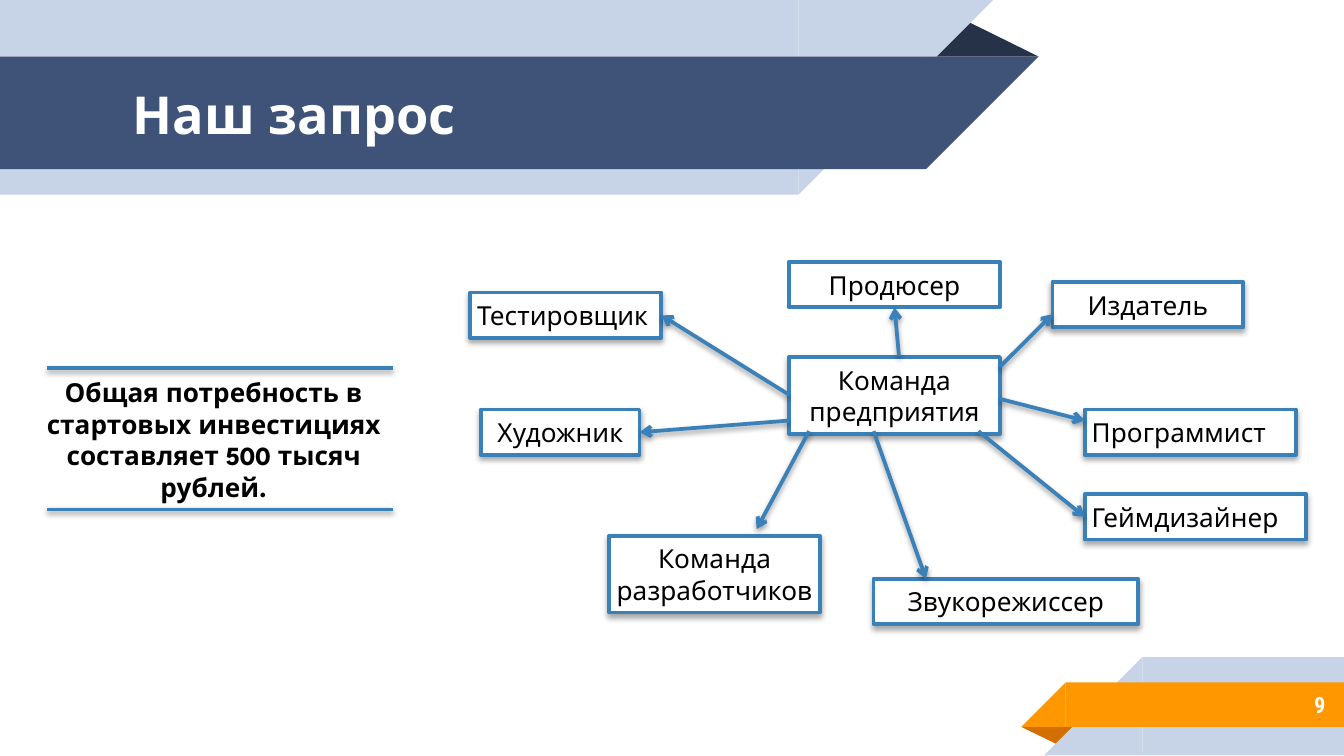
from dataclasses import dataclass

from lxml import etree
from pptx import Presentation
from pptx.dml.color import RGBColor
from pptx.enum import shapes, text
from pptx.oxml import ns
from pptx.util import Cm, Pt


@dataclass(frozen=True)
class Theme:
    navy: str = "3F5378"
    shade: str = "263248"
    pale: str = "C7D3E6"
    orange: str = "FF9800"
    rust: str = "D26F00"
    blue: str = "3A81BA"
    white: str = "FFFFFF"
    black: str = "000000"
    body_font: str = "League Spartan"
    number_font: str = "Roboto Condensed"
    title_size: int = 28
    body_size: int = 14
    number_size: int = 12
    line_width: int = 2


@dataclass(frozen=True)
class Box:
    """A rectangle in centimetres."""
    left: float
    top: float
    width: float
    height: float

    def inner(self, left, top, width, height):
        return Box(self.left + left, self.top + top, width, height)

    def point(self, x, y):
        return Cm(self.left + x), Cm(self.top + y)

    def emu(self):
        return [Cm(side) for side in (self.left, self.top, self.width, self.height)]


THEME = Theme()
CENTER, LEFT, RIGHT = text.PP_ALIGN.CENTER, text.PP_ALIGN.LEFT, text.PP_ALIGN.RIGHT
TOP_SIDE, LEFT_SIDE, BOTTOM_SIDE, RIGHT_SIDE = range(4)

# Role, box, alignment, arrow start, arrow end (a point or a side to join)
ROLES = [
    ("Продюсер", (6.02, 0, 3.99, 0.86), CENTER, (8.1, 1.78), BOTTOM_SIDE),
    ("Издатель", (11, 0.38, 3.61, 0.86), CENTER, (10.01, 1.98), (11, 0.99)),
    ("Команда разработчиков", (2.62, 5.18, 3.99, 1.45), CENTER, (6.4, 3.2), (5.41, 5.05)),
    ("Геймдизайнер", (11.61, 4.39, 4.19, 0.86), LEFT, (9.6, 3.2), LEFT_SIDE),
    ("Художник", (0.2, 2.79, 3, 0.86), CENTER, (6.02, 3), RIGHT_SIDE),
    ("Программист", (11.61, 2.79, 3.99, 0.86), LEFT, (10.01, 2.59), (11.61, 3)),
    ("Тестировщик", (0, 0.58, 3.61, 0.86), LEFT, (6.02, 2.51), RIGHT_SIDE),
    ("Звукорежиссер", (7.62, 5.99, 5, 0.86), CENTER, (7.62, 3.2), (8.61, 5.99)),
]


def apply(target, formats):
    for name, value in formats.items():
        setattr(target, name, value)


def rgb(color):
    return RGBColor.from_string(color)


def paint(shape, color):
    shape.shadow.inherit = False
    shape.fill.solid()
    shape.fill.fore_color.rgb = rgb(color)
    shape.line.fill.background()


def stroke(line):
    line.color.rgb = rgb(THEME.blue)
    line.width = Pt(THEME.line_width)


def cast_shadow(properties, distance, opacity):
    """Put a soft shadow below a shape or line, given its spPr."""
    for old in properties.findall(ns.qn("a:effectLst")):
        properties.remove(old)
    effects = etree.SubElement(properties, ns.qn("a:effectLst"))
    shadow = etree.SubElement(effects, ns.qn("a:outerShdw"), blurRad=str(Pt(3)),
                              dist=str(Pt(distance)), dir="5400000", rotWithShape="0")
    color = etree.SubElement(shadow, ns.qn("a:srgbClr"), val=THEME.black)
    etree.SubElement(color, ns.qn("a:alpha"), val=str(opacity * 1000))


def write(shape, words, align, inset, color=THEME.black, size=THEME.body_size,
          font=THEME.body_font, bold=False, wrap=True):
    frame = shape.text_frame
    margins = {f"margin_{side}": Cm(inset) for side in ("left", "top", "right", "bottom")}
    apply(frame, margins | {"word_wrap": wrap, "vertical_anchor": text.MSO_ANCHOR.MIDDLE})
    paragraph = frame.paragraphs[0]
    paragraph.alignment = align
    run = paragraph.add_run()
    run.text = words
    apply(run.font, {"name": font, "size": Pt(size), "bold": bold})
    run.font.color.rgb = rgb(color)


def add_polygon(slide, points, color):
    builder = slide.shapes.build_freeform(*points[0], scale=1.0)
    builder.add_line_segments(points[1:], close=True)
    paint(builder.convert_to_shape(), color)


def add_ribbon(slide, box, color, direction):
    """Draw a band with a slanted end, to the right (1) or the left (-1)."""
    band = slide.shapes.add_shape(shapes.MSO_SHAPE.RECTANGLE, *box.emu())
    paint(band, color)
    edge = box.width if direction > 0 else 0
    tip = (edge + direction * box.height, 0 if direction > 0 else box.height)
    corners = [(edge, 0), tip, (edge, box.height)]
    add_polygon(slide, [box.point(*corner) for corner in corners], color)


def add_line(slide, start, end, arrow=False):
    line = slide.shapes.add_connector(shapes.MSO_CONNECTOR.STRAIGHT, *start, *end)
    stroke(line.line)
    if arrow:
        etree.SubElement(line.line._get_or_add_ln(), ns.qn("a:tailEnd"), type="arrow")
    cast_shadow(line._element.spPr, 1.6, 38)
    return line


def add_banner(slide, box):
    fold = [(17.48, 1.07), (18.19, 0.36), (19.63, 1.07)]
    add_polygon(slide, [box.point(*corner) for corner in fold], THEME.shade)
    add_ribbon(slide, box.inner(0, 0, 15.09, box.height), THEME.pale, 1)
    add_ribbon(slide, box.inner(0, 1.07, 17.5, 2.13), THEME.navy, 1)
    title = slide.shapes.add_textbox(*box.inner(2.26, 1.09, 14.6, 2.13).emu())
    write(title, "Наш запрос", LEFT, 0.25, THEME.white, THEME.title_size, bold=True)


def add_footer(slide, box):
    fold = [(0, 1.32), (1.09, 1.32), (0.74, 1.68)]
    add_polygon(slide, [box.point(*corner) for corner in fold], THEME.rust)
    add_ribbon(slide, box.inner(2.29, 0, 3.81, box.height), THEME.pale, -1)
    add_ribbon(slide, box.inner(0.84, 0.48, 5.26, 0.84), THEME.orange, -1)
    number = slide.shapes.add_textbox(*box.inner(5.21, 0.41, 0.79, 0.99).emu())
    write(number, "9", RIGHT, 0.25, THEME.white, THEME.number_size,
          THEME.number_font, bold=True, wrap=False)


def add_card(slide, box, words, align, shadow=True):
    card = slide.shapes.add_shape(shapes.MSO_SHAPE.RECTANGLE, *box.emu())
    paint(card, THEME.white)
    stroke(card.line)
    if shadow:
        cast_shadow(card._element.spPr, 1.8, 35)
    write(card, words, align, 0.13)
    return card


def add_team_map(slide, box):
    add_card(slide, box.inner(6.02, 1.8, 3.99, 1.45), "Команда предприятия", CENTER)
    for role, place, align, start, end in ROLES:
        card = add_card(slide, box.inner(*place), role, align, shadow=role != "Продюсер")
        joined = isinstance(end, int)
        target = box.point(*(start if joined else end))
        arrow = add_line(slide, box.point(*start), target, arrow=True)
        if joined:
            arrow.end_connect(card, end)


def add_request(slide, box):
    request = slide.shapes.add_textbox(*box.inner(-0.43, 0.03, 7.16, 2.64).emu())
    write(request, "Общая потребность в стартовых инвестициях составляет 500 тысяч рублей.",
          CENTER, 0.2, bold=True)
    for level in (box.height, 0):
        add_line(slide, box.point(0, level), box.point(box.width, level))


def main():
    deck = Presentation()
    apply(deck, {"slide_width": Cm(25.4), "slide_height": Cm(14.29)})
    slide = deck.slides.add_slide(deck.slide_layouts[6])
    add_banner(slide, Box(0, 0, 19.63, 3.68))
    add_footer(slide, Box(19.3, 12.42, 6.1, 1.86))
    add_team_map(slide, Box(8.89, 4.95, 15.8, 6.85))
    add_request(slide, Box(0.89, 6.96, 6.53, 2.67))
    deck.save("out.pptx")


if __name__ == "__main__":
    main()
